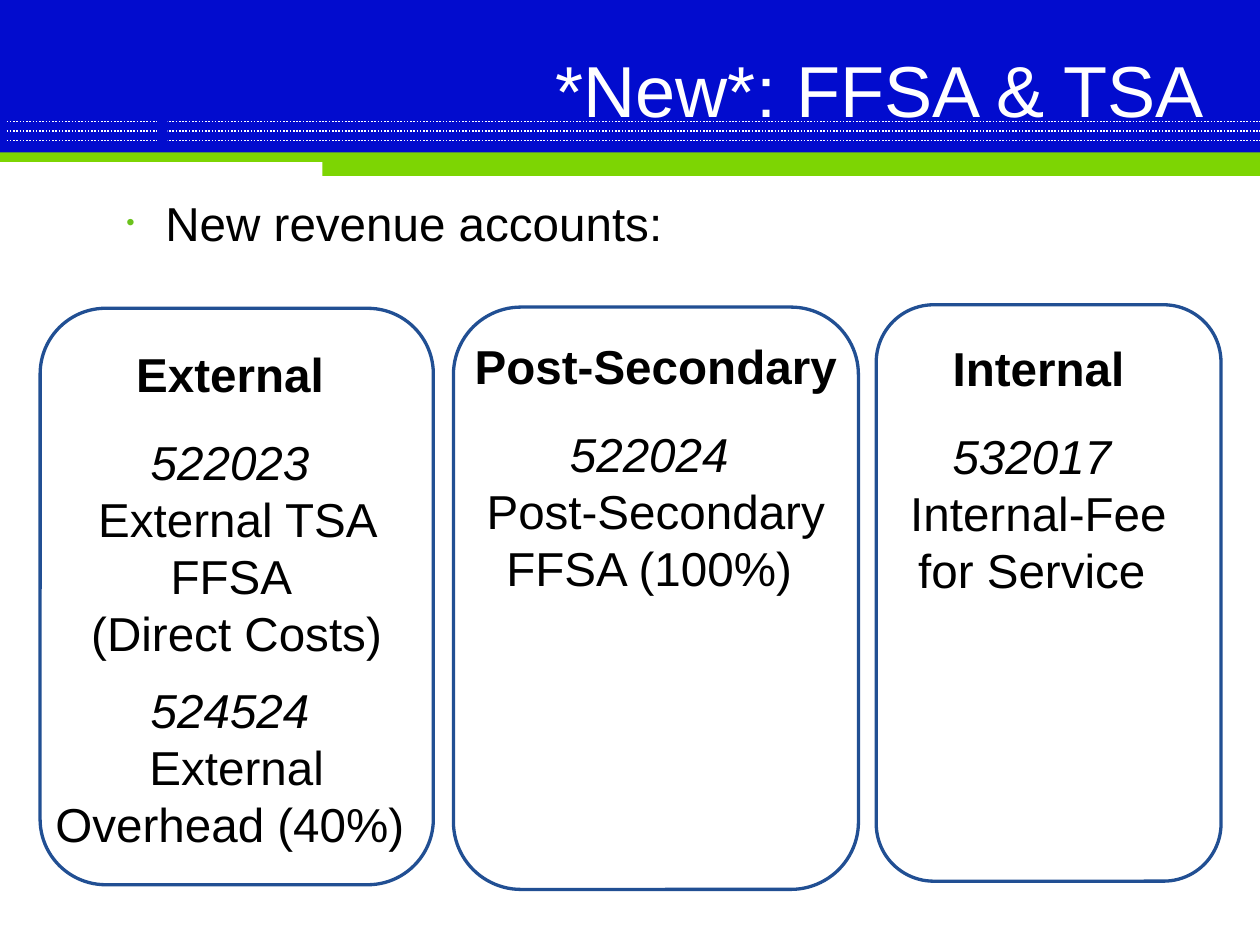
"""Build the slide on new FFSA and TSA revenue accounts."""
from dataclasses import dataclass

from lxml.etree import SubElement
from pptx import Presentation
from pptx.dml.color import RGBColor as Rgb
from pptx.enum.dml import MSO_LINE_DASH_STYLE as Dash
from pptx.enum.shapes import MSO_CONNECTOR_TYPE as Connector, MSO_SHAPE as Preset
from pptx.enum.text import MSO_ANCHOR as Anchor, PP_ALIGN as Align
from pptx.oxml.ns import qn
from pptx.slide import Slide
from pptx.text.text import TextFrame
from pptx.util import Inches, Pt


@dataclass(frozen=True)
class Theme:
    """Colours, font and type sizes of the slide."""
    banner: Rgb = Rgb(0x02, 0x0C, 0xCE)
    stripe: Rgb = Rgb(0x7D, 0xD5, 0x03)
    bullet: str = "6BC21C"
    outline: Rgb = Rgb(0x21, 0x4F, 0x93)
    light: Rgb = Rgb(0xFF, 0xFF, 0xFF)
    dark: Rgb = Rgb(0, 0, 0)
    font: str = "Arial"
    title_size: Pt = Pt(44)
    body_size: Pt = Pt(29)


@dataclass(frozen=True)
class Box:
    """A rectangle in inches."""
    left: float
    top: float
    width: float
    height: float

    def lengths(self) -> tuple:
        """Return the four measures as lengths."""
        return tuple(map(Inches, (self.left, self.top, self.width, self.height)))


@dataclass(frozen=True)
class Entry:
    """One paragraph of an account card."""
    text: str
    bold: bool = False
    italic: bool = False
    gap: float = 0


@dataclass(frozen=True)
class Card:
    """An account category with its frame and text area."""
    frame: Box
    text_area: Box
    entries: tuple


THEME = Theme()
WIDTH, HEIGHT = 10.67, 8
HEADING_GAP, ACCOUNT_GAP = 19, 12
DOTTED_ROWS = [1.03 + 0.08 * row for row in range(3)]
STRIPES = (Box(0, 1.29, WIDTH, 0.08), Box(2.73, 1.32, 7.94, 0.17))
COVERS = (Box(0, 0, 0.05, 1.24), Box(1.33, 0, 0.09, 1.24))
CARDS = (
    Card(Box(0.34, 2.61, 3.33, 4.88), Box(0.34, 2.87, 3.33, 4.44), (
        Entry("External ", bold=True),
        Entry("522023 ", italic=True, gap=HEADING_GAP),
        Entry("External TSA FFSA "),
        Entry("(Direct Costs)"),
        Entry("524524 ", italic=True, gap=ACCOUNT_GAP),
        Entry("External Overhead (40%) "))),
    Card(Box(3.84, 2.6, 3.43, 4.93), Box(3.84, 2.8, 3.43, 2.32), (
        Entry("Post-Secondary", bold=True),
        Entry("522024 ", italic=True, gap=HEADING_GAP),
        Entry("Post-Secondary FFSA (100%) "))),
    Card(Box(7.42, 2.58, 2.92, 4.88), Box(7.42, 2.82, 2.75, 2.32), (
        Entry("Internal", bold=True),
        Entry("532017 ", italic=True, gap=HEADING_GAP),
        Entry("Internal-Fee for Service "))),
)


def apply_format(target: object, values: dict) -> None:
    """Set each named attribute on the target."""
    for name, value in values.items():
        setattr(target, name, value)


def draw_bar(slide: Slide, box: Box, color: Rgb) -> None:
    """Draw a solid rectangle without outline."""
    bar = slide.shapes.add_shape(Preset.RECTANGLE, *box.lengths())
    bar.shadow.inherit = False
    bar.fill.solid()
    bar.fill.fore_color.rgb = color
    bar.line.fill.background()


def draw_dotted_row(slide: Slide, top: float) -> None:
    """Draw a dotted rule across the banner."""
    rule = slide.shapes.add_connector(
        Connector.STRAIGHT, 0, Inches(top), Inches(WIDTH), Inches(top))
    rule.line.color.rgb = THEME.light
    apply_format(rule.line, {"width": Pt(1), "dash_style": Dash.ROUND_DOT})
    SubElement(rule.line._get_or_add_ln().getparent(), qn("a:effectLst"))


def add_text_area(slide: Slide, box: Box, inset: float) -> TextFrame:
    """Add a wrapping text area with the given side inset."""
    frame = slide.shapes.add_textbox(*box.lengths()).text_frame
    apply_format(frame, {"word_wrap": True, "margin_left": Inches(inset),
                         "margin_right": Inches(inset)})
    return frame


def style_font(font: object, size: Pt, color: Rgb, **extras: bool) -> None:
    """Apply the theme font with its size, colour and emphasis."""
    apply_format(font, {"name": THEME.font, "size": size, **extras})
    font.color.rgb = color


def draw_banner(slide: Slide) -> None:
    """Draw the banner with its dotted rules and stripes."""
    draw_bar(slide, Box(0, 0, WIDTH, 1.33), THEME.banner)
    for top in DOTTED_ROWS:
        draw_dotted_row(slide, top)
    for stripe in STRIPES:
        draw_bar(slide, stripe, THEME.stripe)
    for cover in COVERS:
        draw_bar(slide, cover, THEME.banner)


def write_title(slide: Slide) -> None:
    """Write the title at the right of the banner."""
    frame = add_text_area(slide, Box(3, 0.25, 7.31, 1), 0.11)
    frame.vertical_anchor = Anchor.MIDDLE
    title = frame.paragraphs[0]
    apply_format(title, {"text": "*New*: FFSA & TSA", "alignment": Align.RIGHT})
    style_font(title.runs[0].font, THEME.title_size, THEME.light)


def write_lead(slide: Slide) -> None:
    """Write the bulleted line above the cards."""
    lead = add_text_area(slide, Box(0.42, 1.59, 9.72, 0.7), 0.11).paragraphs[0]
    lead.text = "New revenue accounts:"
    properties = lead._p.get_or_add_pPr()
    properties.set("marL", str(Inches(0.87)))
    properties.set("indent", str(Inches(-0.33)))
    bullet_color = SubElement(properties, qn("a:buClr"))
    SubElement(bullet_color, qn("a:srgbClr"), val=THEME.bullet)
    SubElement(properties, qn("a:buSzPct"), val="50000")
    SubElement(properties, qn("a:buFont"), typeface=THEME.font)
    SubElement(properties, qn("a:buChar"), char="•")
    style_font(lead.runs[0].font, THEME.body_size, THEME.dark)


def draw_card(slide: Slide, card: Card) -> None:
    """Draw a rounded card and its account entries."""
    outline = slide.shapes.add_shape(Preset.ROUNDED_RECTANGLE, *card.frame.lengths())
    outline.shadow.inherit = False
    outline.fill.background()
    outline.line.color.rgb = THEME.outline
    outline.line.width = Pt(2)
    frame = add_text_area(slide, card.text_area, 0.1)
    for position, entry in enumerate(card.entries):
        line = frame.add_paragraph() if position else frame.paragraphs[0]
        apply_format(line, {"text": entry.text, "alignment": Align.CENTER})
        if entry.gap:
            line.space_before = Pt(entry.gap)
        style_font(line.runs[0].font, THEME.body_size, THEME.dark,
                   bold=entry.bold, italic=entry.italic)


def main() -> None:
    """Build and save the slide."""
    deck = Presentation()
    apply_format(deck, {"slide_width": Inches(WIDTH), "slide_height": Inches(HEIGHT)})
    slide = deck.slides.add_slide(deck.slide_layouts[6])
    draw_banner(slide)
    write_title(slide)
    write_lead(slide)
    for card in CARDS:
        draw_card(slide, card)
    deck.save("out.pptx")


if __name__ == "__main__":
    main()
